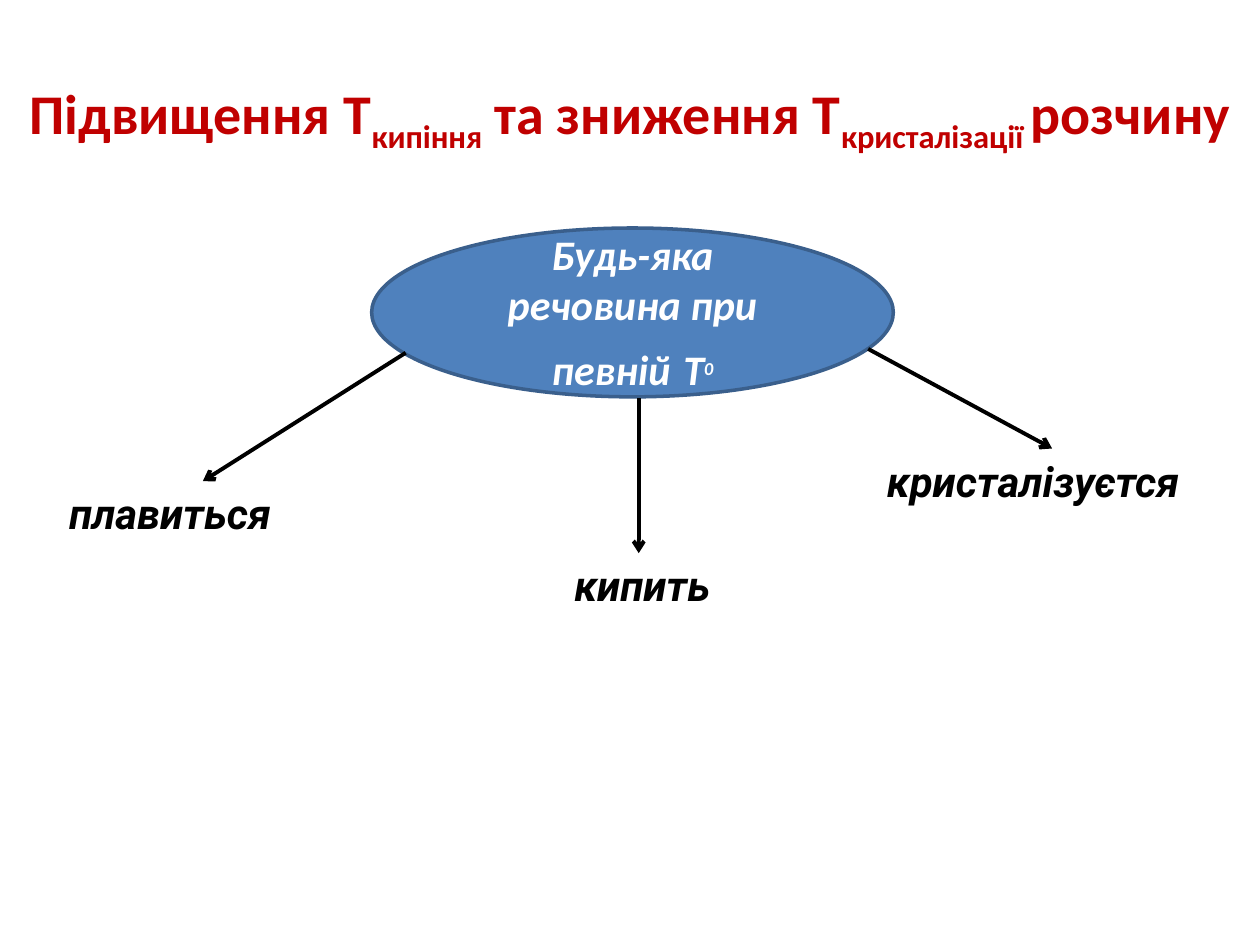
import pptx
import pptx.util
import pptx.dml.color
import pptx.enum.shapes
import pptx.enum.text
import pptx.oxml.ns
import lxml.etree
from dataclasses import dataclass

Pt = pptx.util.Pt
Align = pptx.enum.text.PP_ALIGN
Anchor = pptx.enum.text.MSO_ANCHOR
AutoSize = pptx.enum.text.MSO_AUTO_SIZE


@dataclass(frozen=True)
class Theme:
    title: str = "C00000"
    ellipse: str = "4F81BD"
    outline: str = "3A5F8C"
    light: str = "FFFFFF"
    dark: str = "000000"
    heading_font: str = "Calibri"
    label_font: str = "Roboto"
    large: int = 32
    medium: int = 24
    small: int = 18


theme = Theme()


def rgb(value):
    return pptx.dml.color.RGBColor.from_string(value)


def add_text(para, text, *, size, color, font, italic=False, baseline=0):
    span = para.add_run()
    span.text = text
    span.font.size = Pt(size)
    span.font.name = font
    span.font.bold = True
    span.font.italic = italic
    span.font.color.rgb = rgb(color)
    if baseline:
        span.font._element.set("baseline", str(baseline * 1000))


deck = pptx.Presentation()
deck.slide_width, deck.slide_height = Pt(720), Pt(540)
page = deck.slides.add_slide(deck.slide_layouts[5])

title = page.shapes.title
title.left, title.top, title.width, title.height = Pt(0), Pt(21.6), Pt(720), Pt(90)
title.text_frame.auto_size = AutoSize.NONE
title.text_frame.vertical_anchor = Anchor.MIDDLE
para = title.text_frame.paragraphs[0]
para.alignment = Align.CENTER
for text, baseline in [
    ("Підвищення Т", 0),
    ("кипіння", -25),
    (" та зниження Т", 0),
    ("кристалізації ", -25),
    ("розчину", 0),
]:
    add_text(para, text, size=theme.large, color=theme.title,
             font=theme.heading_font, baseline=baseline)

ellipse = page.shapes.add_shape(pptx.enum.shapes.MSO_SHAPE.OVAL,
                                Pt(212.4), Pt(130.3), Pt(298.1), Pt(96.5))
ellipse.shadow.inherit = False
ellipse.fill.solid()
ellipse.fill.fore_color.rgb = rgb(theme.ellipse)
ellipse.line.color.rgb = rgb(theme.outline)
ellipse.line.width = Pt(2)
ellipse.text_frame.word_wrap = True
ellipse.text_frame.vertical_anchor = Anchor.MIDDLE
para = ellipse.text_frame.paragraphs[0]
para.alignment = Align.CENTER
for text, size, baseline in [
    ("Будь-яка речовина при певній", theme.medium, 0),
    (" ", theme.large, 0),
    ("Т", theme.medium, 0),
    ("0", theme.small, 30),
]:
    add_text(para, text, size=size, color=theme.light,
             font=theme.heading_font, italic=True, baseline=baseline)

for start_x, start_y, end_x, end_y in [
    (231.8, 201.6, 115.9, 275),
    (365, 227.5, 365, 316.1),
    (496.1, 199.4, 601.2, 256.3),
]:
    arrow = page.shapes.add_connector(pptx.enum.shapes.MSO_CONNECTOR.STRAIGHT,
                                      Pt(start_x), Pt(start_y), Pt(end_x), Pt(end_y))
    arrow.line.color.rgb = rgb(theme.dark)
    arrow.line.width = Pt(2.25)
    properties = arrow._element.spPr
    outline = properties.find(pptx.oxml.ns.qn("a:ln"))
    lxml.etree.SubElement(outline, pptx.oxml.ns.qn("a:tailEnd"), type="arrow")
    lxml.etree.SubElement(properties, pptx.oxml.ns.qn("a:effectLst"))

for text, left, top, width in [
    ("плавиться ", 32.4, 275, 151.9),
    ("кипить", 321.1, 316.1, 103),
    ("кристалізуєтся", 499.7, 257, 203),
]:
    box = page.shapes.add_textbox(Pt(left), Pt(top), Pt(width), Pt(36))
    box.text_frame.word_wrap = False
    box.text_frame.auto_size = AutoSize.SHAPE_TO_FIT_TEXT
    para = box.text_frame.paragraphs[0]
    para.alignment = Align.JUSTIFY
    add_text(para, text, size=theme.medium, color=theme.dark,
             font=theme.label_font, italic=True)

deck.save("out.pptx")
